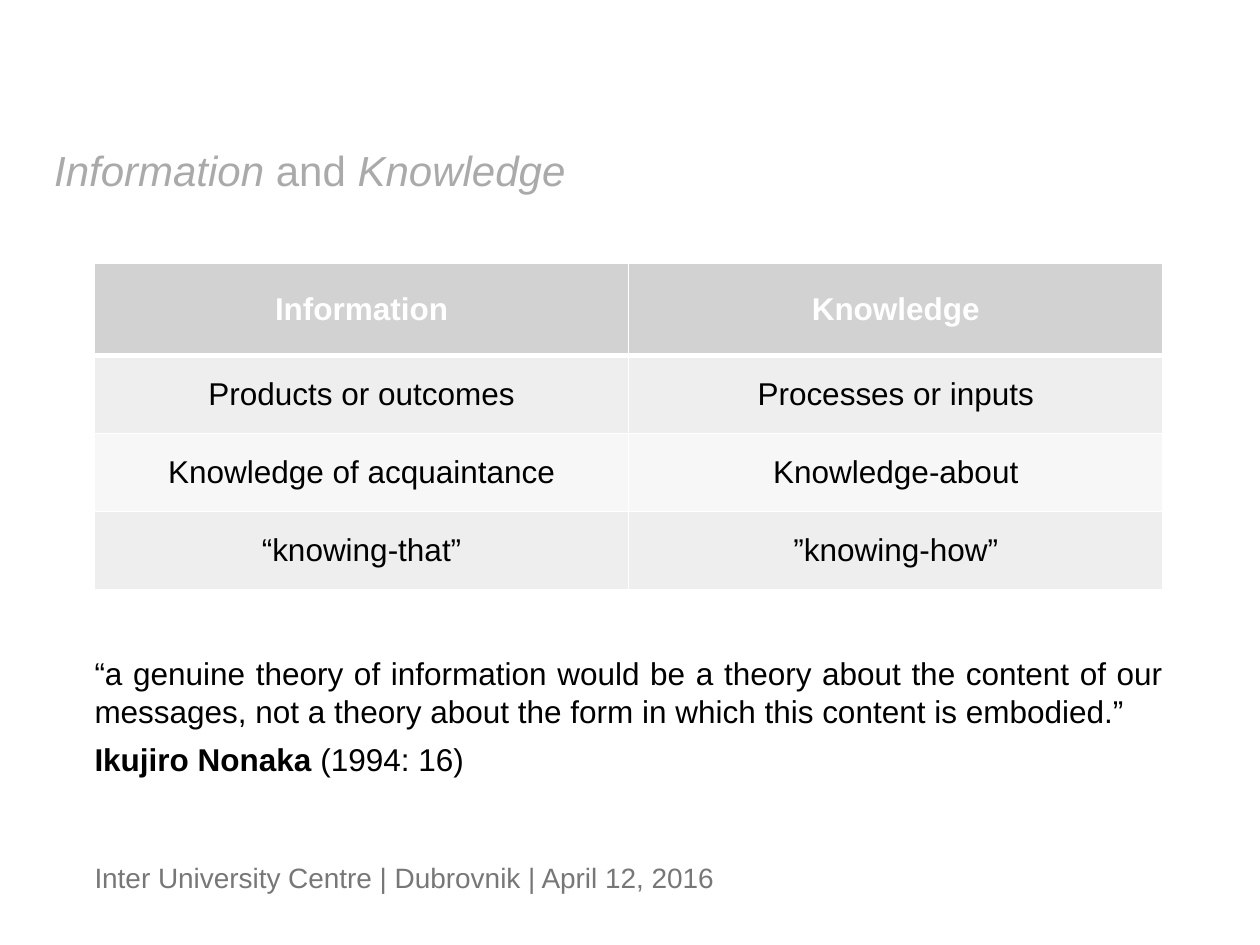
from lxml import etree
from pptx import Presentation
from pptx.dml.color import RGBColor
from pptx.enum.text import MSO_ANCHOR, PP_ALIGN
from pptx.oxml.ns import qn
from pptx.util import Inches, Pt

LEFT, CENTER, JUSTIFY = PP_ALIGN.LEFT, PP_ALIGN.CENTER, PP_ALIGN.JUSTIFY
MIDDLE = MSO_ANCHOR.MIDDLE
BLANK_LAYOUT = 6

ROWS = [
    ("Information", "Knowledge"),
    ("Products or outcomes", "Processes or inputs"),
    ("Knowledge of acquaintance", "Knowledge-about"),
    ("“knowing-that”", "”knowing-how”"),
]
QUOTE = (
    "“a genuine theory of information would be a theory about the content "
    "of our messages, not a theory about the form in which this content is "
    "embodied.”"
)


def color(value):
    return RGBColor.from_string(value)


class SlideBuilder:
    font_name = "Arial"
    black, white = "000000", "FFFFFF"
    title_gray, footer_gray = "AAAAAA", "777777"
    header_fill = "D2D2D2"
    band_fills = ("EEEEEE", "F7F7F7")
    body_size = 18

    def __init__(self, page):
        self.page = page

    def style(self, span, size, hex_color, bold=False, italic=False):
        font = span.font
        font.name, font.size = self.font_name, Pt(size)
        font.color.rgb = color(hex_color)
        font.bold, font.italic = bold, italic

    def text(self, left, top, width, height, paragraphs, size, hex_color):
        """Each paragraph is (alignment, [(words, run style), ...])."""
        box = self.page.shapes.add_textbox(
            Inches(left), Inches(top), Inches(width), Inches(height))
        frame = box.text_frame
        frame.word_wrap = True
        frame.margin_left = frame.margin_right = 0
        frame.margin_top = frame.margin_bottom = 0
        for index, (alignment, spans) in enumerate(paragraphs):
            para = frame.add_paragraph() if index else frame.paragraphs[0]
            para.alignment = alignment
            if index:
                para.space_before = Pt(6)
            for words, options in spans:
                span = para.add_run()
                span.text = words
                self.style(span, size, hex_color, **options)

    def borders(self, cell, top_width, bottom_width):
        """Draw white lines; must come before the cell fill in the XML."""
        properties = cell._tc.get_or_add_tcPr()
        widths = {"L": 1, "R": 1, "T": top_width, "B": bottom_width}
        for side, width in widths.items():
            line = etree.SubElement(
                properties, qn(f"a:ln{side}"), w=str(Pt(width)))
            fill = etree.SubElement(line, qn("a:solidFill"))
            etree.SubElement(fill, qn("a:srgbClr"), val=self.white)

    def table(self, left, top, width, row_heights, rows):
        columns = len(rows[0])
        grid = self.page.shapes.add_table(
            len(rows), columns, Inches(left), Inches(top),
            Inches(width), Inches(sum(row_heights))).table
        for column in grid.columns:
            column.width = Inches(width / columns)
        for row_index, (height, labels) in enumerate(zip(row_heights, rows)):
            grid.rows[row_index].height = Inches(height)
            header = row_index == 0
            for column_index, label in enumerate(labels):
                cell = grid.cell(row_index, column_index)
                self.borders(cell, 3 if row_index == 1 else 1,
                             3 if header else 1)
                cell.fill.solid()
                cell.fill.fore_color.rgb = color(
                    self.header_fill if header
                    else self.band_fills[(row_index - 1) % 2])
                cell.vertical_anchor = MIDDLE
                cell.text_frame.text = label
                para = cell.text_frame.paragraphs[0]
                para.alignment = CENTER
                self.style(para.runs[0], self.body_size,
                           self.white if header else self.black, bold=header)


def main():
    deck = Presentation()
    deck.slide_width, deck.slide_height = Inches(10), Inches(7.5)
    builder = SlideBuilder(
        deck.slides.add_slide(deck.slide_layouts[BLANK_LAYOUT]))
    italic, bold = {"italic": True}, {"bold": True}

    title = [("Information", italic), (" and ", {}), ("Knowledge", italic)]
    builder.text(0.43, 1.15, 9.14, 0.4, [(LEFT, title)],
                 24, builder.title_gray)
    builder.table(0.75, 2.09, 8.48, [0.73, 0.62, 0.62, 0.62], ROWS)
    source = [("Ikujiro Nonaka ", bold), ("(1994: 16)", {})]
    builder.text(0.75, 5.19, 8.48, 0.95,
                 [(JUSTIFY, [(QUOTE, {})]), (LEFT, source)],
                 builder.body_size, builder.black)
    footer = [("Inter University Centre | Dubrovnik | April 12, 2016", {})]
    builder.text(0.75, 6.83, 7.29, 0.27, [(LEFT, footer)],
                 16, builder.footer_gray)
    deck.save("out.pptx")


if __name__ == "__main__":
    main()
